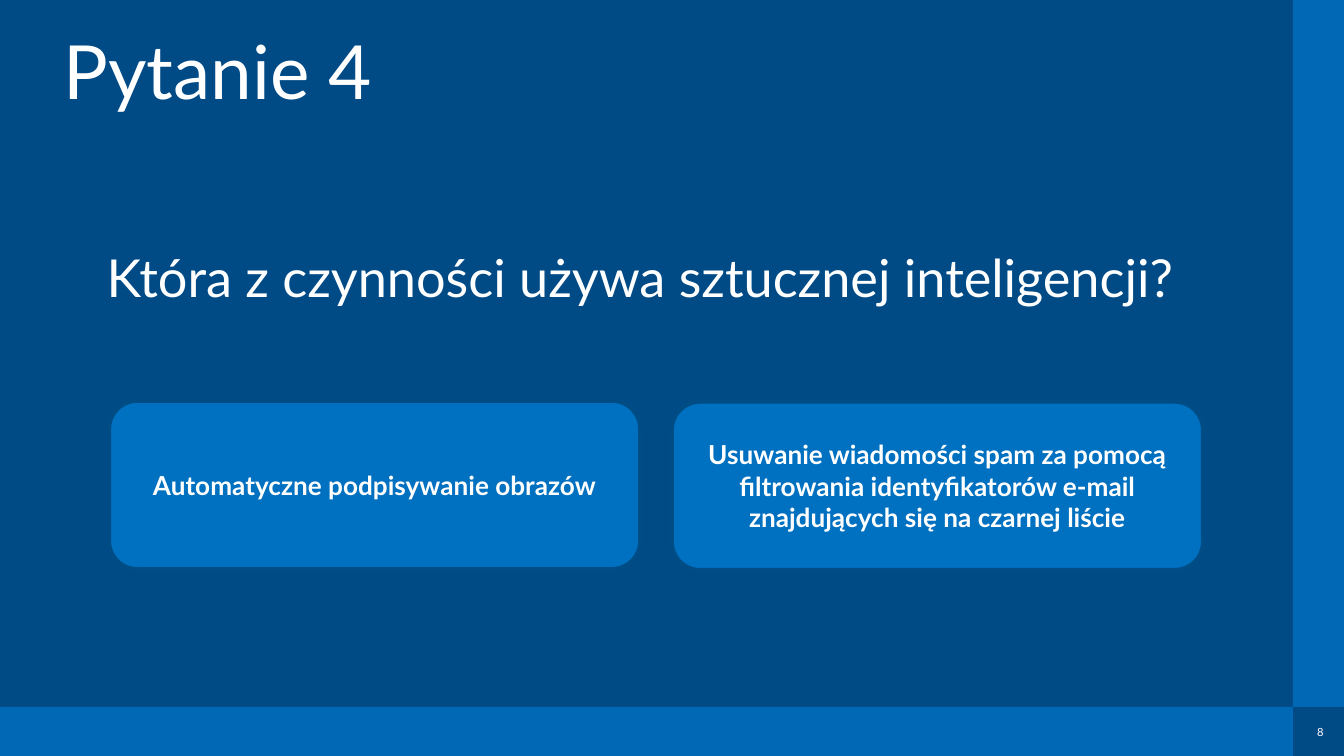
from pptx import Presentation
from pptx.dml.color import RGBColor
from pptx.enum.shapes import MSO_SHAPE
from pptx.enum.text import MSO_ANCHOR, PP_ALIGN
from pptx.util import Pt

COLOURS = {
    "background": "004A86",
    "band": "0068B5",
    "answer": "0070C0",
    "outline": "004D86",
    "text": "FFFFFF",
}
WIDTH, HEIGHT = 720, 405
BAND_LEFT, BAND_TOP = 692.6, 378.7


class QuizPage:
    font = "Lato"

    def __init__(self, deck):
        self.page = deck.slides.add_slide(deck.slide_layouts[5])
        fill = self.page.background.fill
        fill.solid()
        fill.fore_color.rgb = self.colour("background")

    def colour(self, name):
        return RGBColor.from_string(COLOURS[name])

    def set_text(self, box, text, size, bold=False, spacing=None, margin=None, wrap=True):
        frame = box.text_frame
        frame.word_wrap = wrap
        frame.vertical_anchor = MSO_ANCHOR.MIDDLE
        if margin is not None:
            frame.margin_left = frame.margin_right = Pt(margin)
            frame.margin_top = frame.margin_bottom = Pt(margin)
        para = frame.paragraphs[0]
        para.alignment = PP_ALIGN.CENTER
        if spacing:
            para.line_spacing = spacing
        span = para.add_run()
        span.text = text
        span.font.name = self.font
        span.font.size = Pt(size)
        span.font.bold = bold
        span.font.color.rgb = self.colour("text")

    def shape(self, kind, left, top, width, height, fill):
        box = self.page.shapes.add_shape(kind, Pt(left), Pt(top), Pt(width), Pt(height))
        box.shadow.inherit = False
        box.fill.solid()
        box.fill.fore_color.rgb = self.colour(fill)
        box.line.fill.background()
        return box

    def band(self, left, top, width, height):
        self.shape(MSO_SHAPE.RECTANGLE, left, top, width, height, "band")

    def answer(self, left, top, text):
        box = self.shape(MSO_SHAPE.ROUNDED_RECTANGLE, left, top, 284.4, 90, "answer")
        box.line.color.rgb = self.colour("outline")
        box.line.width = Pt(2)
        self.set_text(box, text, 14, bold=True)

    def title(self, left, top, width, height, text):
        box = self.page.shapes.title
        box.left, box.top, box.width, box.height = map(Pt, (left, top, width, height))
        self.set_text(box, text, 40, spacing=0.8, margin=0)

    def label(self, left, top, width, height, text, size, **style):
        box = self.page.shapes.add_textbox(Pt(left), Pt(top), Pt(width), Pt(height))
        self.set_text(box, text, size, margin=0, **style)


def main():
    deck = Presentation()
    deck.slide_width, deck.slide_height = Pt(WIDTH), Pt(HEIGHT)
    quiz = QuizPage(deck)
    quiz.band(0, BAND_TOP, BAND_LEFT, HEIGHT - BAND_TOP)
    quiz.band(BAND_LEFT, 0, WIDTH - BAND_LEFT, BAND_TOP)
    quiz.label(703.4, 388.8, 7.9, 7.2, "8", 6, wrap=False)
    quiz.answer(58.5, 214.8, "Automatyczne podpisywanie obrazów")
    quiz.answer(
        360,
        215.3,
        "Usuwanie wiadomości spam za pomocą filtrowania identyfikatorów e-mail "
        "znajdujących się na czarnej liście",
    )
    quiz.label(
        14, 98.6, 657.4, 105.8,
        "Która z czynności używa sztucznej inteligencji?", 28, spacing=0.8,
    )
    quiz.title(5.8, 7.9, 221.8, 67.7, "Pytanie 4")
    deck.save("out.pptx")


if __name__ == "__main__":
    main()
